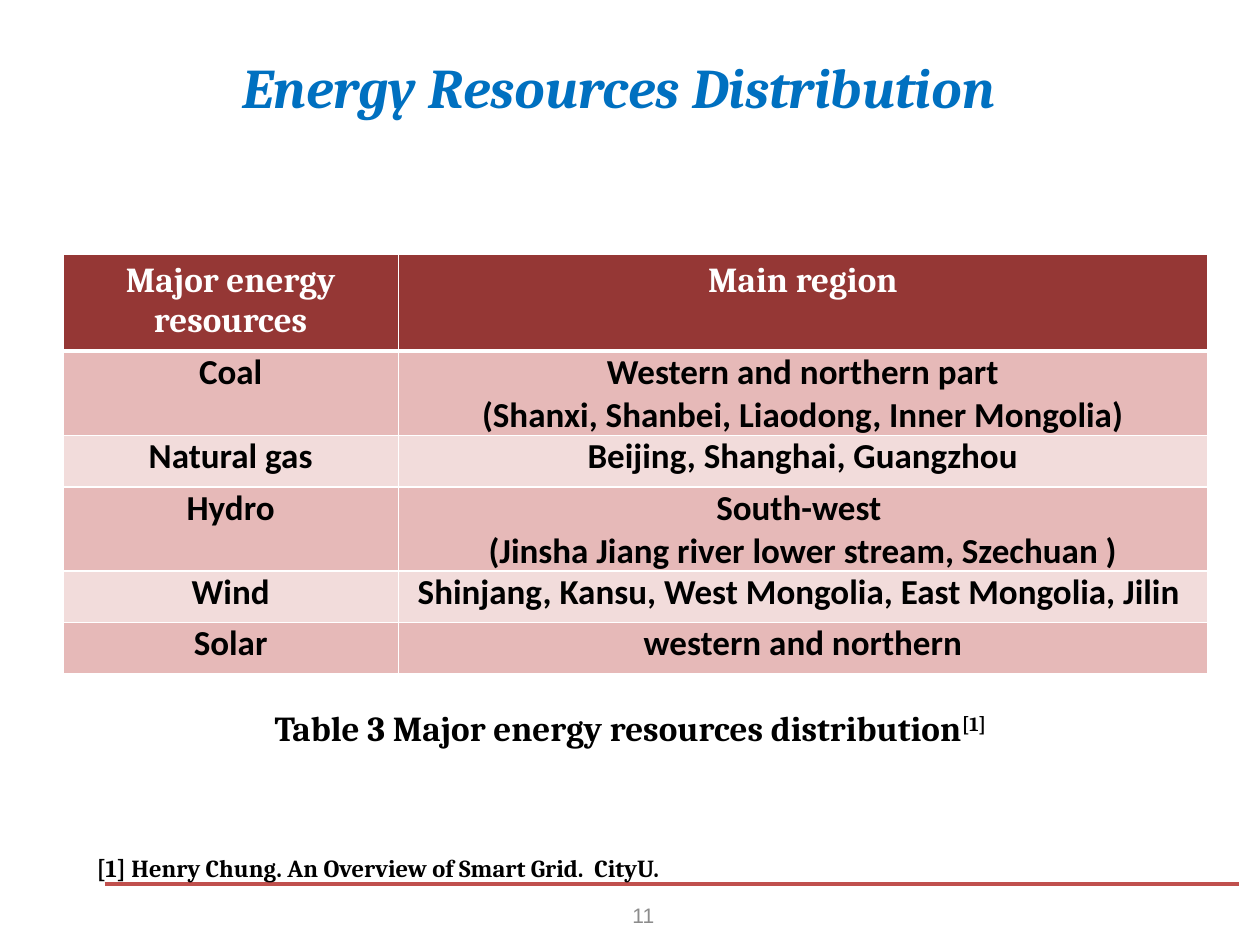
import pptx
import pptx.dml.color
import pptx.enum.shapes
import pptx.enum.text
import pptx.oxml
import pptx.oxml.ns
import pptx.util
from lxml import etree

Cm = pptx.util.Cm
Pt = pptx.util.Pt
Align = pptx.enum.text.PP_ALIGN
Anchor = pptx.enum.text.MSO_ANCHOR

COLORS = {
    "title": "0070C0", "text": "000000", "white": "FFFFFF", "page": "8C8C8C",
    "rule": "C0504D", "head": "953735", "dark": "E6B9B8", "light": "F2DCDB",
}
ROWS = [
    ("Major energy resources", "Main region"),
    ("Coal", "Western and northern part\n(Shanxi, Shanbei, Liaodong, Inner Mongolia)"),
    ("Natural gas", "Beijing, Shanghai, Guangzhou"),
    ("Hydro", "South-west \n(Jinsha Jiang river lower stream, Szechuan )"),
    ("Wind", "Shinjang, Kansu, West Mongolia, East Mongolia, Jilin "),
    ("Solar", "western and northern"),
]
WIDTHS = (6.76, 16.31)


def rgb(name):
    return pptx.dml.color.RGBColor.from_string(COLORS[name])


def style(frame, size, face, color, align=Align.LEFT, bold=True, italic=False):
    for para in frame.paragraphs:
        para.alignment = align
        for run in para.runs:
            font = run.font
            font.size, font.name = Pt(size), face
            font.bold, font.italic = bold, italic
            font.color.rgb = rgb(color)


def add_text(slide, text, left, top, width, height, wrap=True):
    box = slide.shapes.add_textbox(Cm(left), Cm(top), Cm(width), Cm(height))
    frame = box.text_frame
    frame.word_wrap = wrap
    frame.text = text
    return frame


def set_title(slide, text):
    title = slide.shapes.title
    title.left, title.top = Cm(1.07), Cm(0.91)
    title.width, title.height = Cm(23.06), Cm(1.63)
    frame = title.text_frame
    frame.text = text
    frame.vertical_anchor = Anchor.BOTTOM
    frame.paragraphs[0].line_spacing = 0.85
    style(frame, 32, "Cambria", "title", Align.CENTER, italic=True)


def add_rule(slide):
    line = slide.shapes.add_connector(
        pptx.enum.shapes.MSO_CONNECTOR.STRAIGHT,
        Cm(2.11), Cm(17.83), Cm(24.97), Cm(17.83))
    line.line.color.rgb = rgb("rule")
    line.line.width = Pt(2.25)
    props = line._element.spPr
    etree.SubElement(props, pptx.oxml.ns.qn("a:effectLst"))


def set_edges(cell, top, bottom):
    """Draw white cell borders; top and bottom are widths in points."""
    props = cell._tc.get_or_add_tcPr()
    for side, width in (("L", 1), ("R", 1), ("T", top), ("B", bottom)):
        props.append(pptx.oxml.parse_xml(
            f'<a:ln{side} {pptx.oxml.ns.nsdecls("a")} w="{Pt(width)}">'
            f'<a:solidFill><a:srgbClr val="{COLORS["white"]}"/></a:solidFill>'
            f'</a:ln{side}>'))


def fill_cell(cell, text, row):
    cell.text_frame.text = text
    if row == 0:
        fill, face, color = "head", "Cambria", "white"
    else:
        fill, face, color = "dark" if row % 2 else "light", "Calibri", "text"
        cell.margin_top = cell.margin_bottom = 0
    style(cell.text_frame, 20, face, color, Align.CENTER)
    set_edges(cell, 3 if row == 1 else 1, 3 if row == 0 else 1)
    cell.fill.solid()
    cell.fill.fore_color.rgb = rgb(fill)


def add_grid(slide):
    table = slide.shapes.add_table(
        len(ROWS), len(WIDTHS), Cm(1.27), Cm(5.13), Cm(sum(WIDTHS)), Cm(7.2)).table
    for col, width in zip(table.columns, WIDTHS):
        col.width = Cm(width)
    for r, texts in enumerate(ROWS):
        table.rows[r].height = Cm(1.52 if "\n" in texts[1] else 1.04)
        for c, text in enumerate(texts):
            fill_cell(table.cell(r, c), text, r)


def add_caption(slide):
    frame = add_text(slide, "Table 3 Major energy resources distribution",
                     4.9, 14.12, 15.62, 1.12)
    mark = frame.paragraphs[0].add_run()
    mark.text = "[1]"
    style(frame, 20, "Cambria", "text", Align.CENTER)
    mark._r.get_or_add_rPr().set("baseline", "30000")


def main():
    deck = pptx.Presentation()
    deck.slide_width, deck.slide_height = Cm(25.4), Cm(19.05)
    slide = deck.slides.add_slide(deck.slide_layouts[5])
    add_rule(slide)
    set_title(slide, "Energy Resources Distribution ")
    page = add_text(slide, "11", 11.76, 17.98, 1.68, 0.84, wrap=False)
    page.vertical_anchor = Anchor.BOTTOM
    style(page, 12, "Arial", "page", Align.RIGHT, bold=False)
    note = add_text(slide, "[1] Henry Chung. An Overview of Smart Grid.  CityU.",
                    1.7, 17.07, 13.2, 0.86)
    style(note, 14, "Cambria", "text")
    add_grid(slide)
    add_caption(slide)
    deck.save("out.pptx")


if __name__ == "__main__":
    main()
